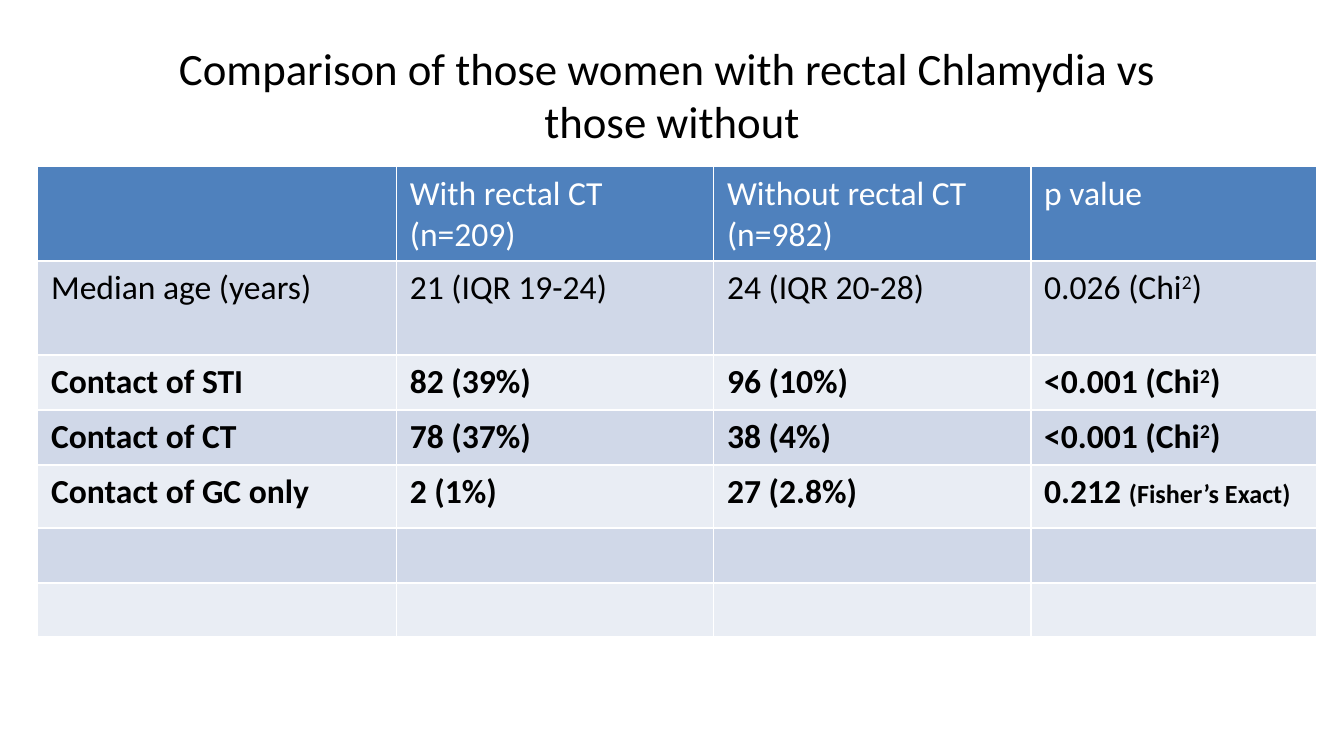
from dataclasses import dataclass

from lxml import etree
from pptx import Presentation
from pptx.dml.color import RGBColor
from pptx.enum.text import MSO_ANCHOR, PP_ALIGN
from pptx.oxml.ns import qn
from pptx.util import Inches, Pt

CENTER = PP_ALIGN.CENTER
MIDDLE = MSO_ANCHOR.MIDDLE


@dataclass(frozen=True)
class Theme:
    font: str = "Calibri"
    title_size: int = 24
    body_size: int = 18
    note_size: int = 14
    text: str = "000000"
    header_text: str = "FFFFFF"
    header_fill: str = "4F81BD"
    bands: tuple = ("D0D8E8", "E9EDF4")
    border: str = "FFFFFF"
    border_width: int = 1


THEME = Theme()

# A cell is a list of (text, style) runs, or a plain string
CHI_TAIL = [("2", "super"), (")", None)]
HEADER = ["", "With rectal CT (n=209)", "Without rectal CT (n=982)", "p value"]
ROWS = [
    ["Median age (years)", "21 (IQR 19-24)", "24 (IQR 20-28)",
     [("0.026 (Chi", None), *CHI_TAIL]],
    ["Contact of STI", "82 (39%)", "96 (10%)", [("<0.001 (Chi", None), *CHI_TAIL]],
    ["Contact of CT", "78 (37%)", "38 (4%)", [("<0.001 (Chi", None), *CHI_TAIL]],
    ["Contact of GC only", "2 (1%)", "27 (2.8%)",
     [("0.212 ", None), ("(Fisher’s Exact)", "note")]],
    [""] * 4,
    [""] * 4,
]
BOLD_ROWS = (2, 3, 4)
COLUMN_WIDTHS = [2.67, 2.36, 2.36, 2.13]
ROW_HEIGHTS = [0.7, 0.7, 0.41, 0.41, 0.47, 0.41, 0.4]


def set_font(paragraph, size, color, bold=False):
    font = paragraph.font
    font.name, font.size, font.bold = THEME.font, Pt(size), bold
    font.color.rgb = RGBColor.from_string(color)


def set_borders(cell):
    properties = cell._tc.get_or_add_tcPr()
    # Border lines must come before the fill
    for position, tag in enumerate(("a:lnL", "a:lnR", "a:lnT", "a:lnB")):
        line = etree.Element(qn(tag), w=str(Pt(THEME.border_width)))
        fill = etree.SubElement(line, qn("a:solidFill"))
        etree.SubElement(fill, qn("a:srgbClr"), val=THEME.border)
        properties.insert(position, line)


def fill_cell(cell, content, fill, color, bold):
    cell.fill.solid()
    cell.fill.fore_color.rgb = RGBColor.from_string(fill)
    paragraph = cell.text_frame.paragraphs[0]
    set_font(paragraph, THEME.body_size, color, bold)
    runs = [(content, None)] if isinstance(content, str) else content
    for text, style in runs:
        if not text:
            continue
        run = paragraph.add_run()
        run.text = text
        if style == "super":
            run.font._element.set("baseline", "30000")
        elif style == "note":
            run.font.size = Pt(THEME.note_size)


def add_title(slide, left, top, width, height):
    box = slide.shapes.add_textbox(Inches(left), Inches(top), Inches(width), Inches(height))
    frame = box.text_frame
    frame.word_wrap = True
    frame.vertical_anchor = MIDDLE
    title = frame.paragraphs[0]
    title.text = "Comparison of those women with rectal Chlamydia vs \vthose without"
    title.alignment = CENTER
    set_font(title, THEME.title_size, THEME.text)


def add_comparison(slide, left, top):
    contents = [HEADER, *ROWS]
    table = slide.shapes.add_table(
        len(contents), len(HEADER), Inches(left), Inches(top),
        Inches(sum(COLUMN_WIDTHS)), Inches(sum(ROW_HEIGHTS))).table
    for column, width in zip(table.columns, COLUMN_WIDTHS):
        column.width = Inches(width)
    for row, height in zip(table.rows, ROW_HEIGHTS):
        row.height = Inches(height)

    for r, row in enumerate(contents):
        is_header = r == 0
        fill = THEME.header_fill if is_header else THEME.bands[(r - 1) % 2]
        color = THEME.header_text if is_header else THEME.text
        for c, content in enumerate(row):
            cell = table.cell(r, c)
            fill_cell(cell, content, fill, color, r in BOLD_ROWS)
            set_borders(cell)


def main():
    deck = Presentation()
    # Widescreen, 16:9
    deck.slide_width = Inches(10)
    deck.slide_height = deck.slide_width * 9 // 16
    slide = deck.slides.add_slide(deck.slide_layouts[6])
    add_title(slide, 0.5, 0.23, 9, 0.94)
    add_comparison(slide, 0.28, 1.24)
    deck.save("out.pptx")


if __name__ == "__main__":
    main()
